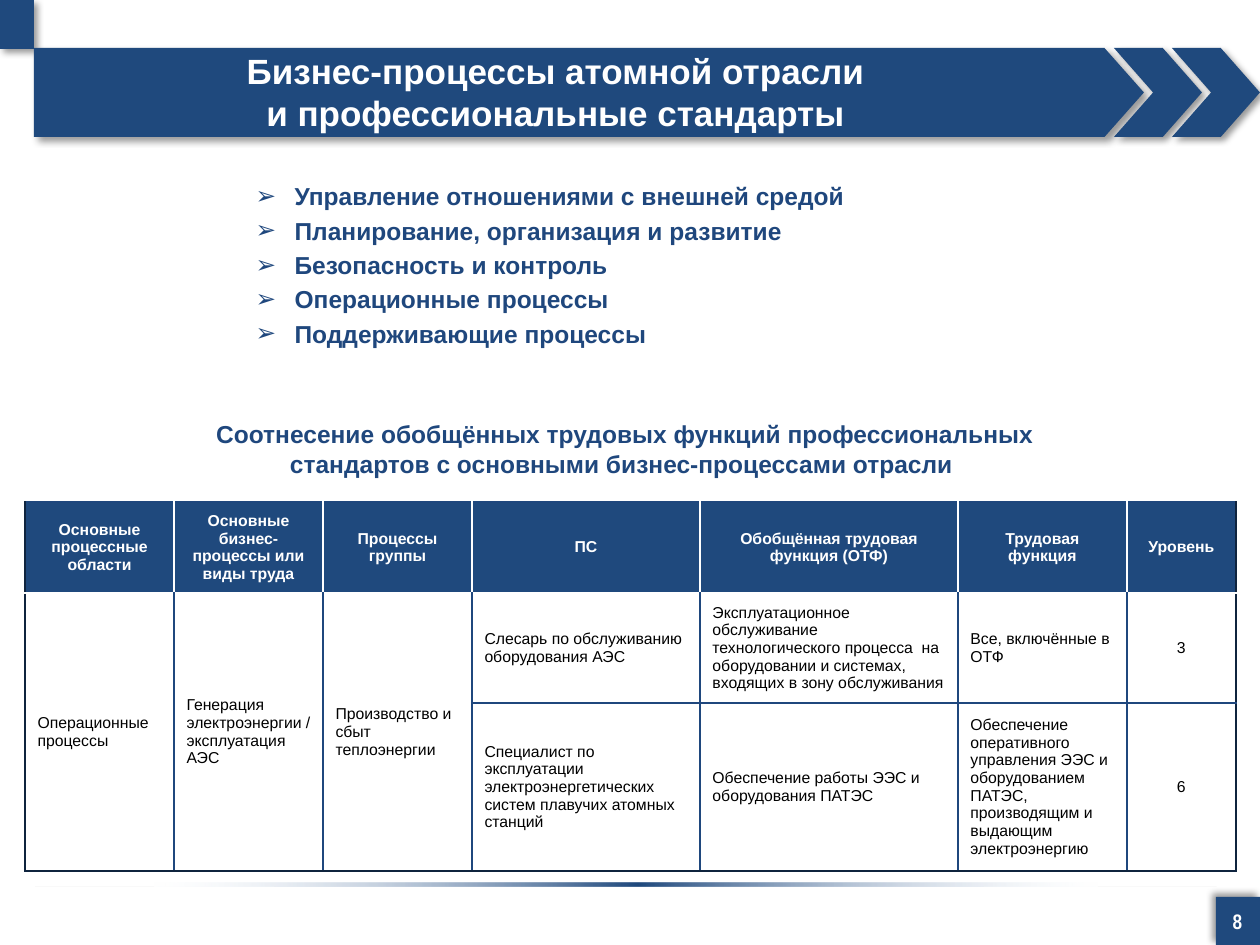
from lxml.etree import SubElement, fromstring
from pptx import Presentation
from pptx.dml.color import RGBColor
from pptx.enum.shapes import MSO_SHAPE as Shape
from pptx.enum.text import MSO_ANCHOR as Anchor, MSO_AUTO_SIZE as AutoSize, PP_ALIGN as Align
from pptx.oxml.ns import nsdecls, qn
from pptx.util import Pt

PX = 914400 / 126
BLUE, INK, EDGE, PALE = "1F497D", "1F477D", "0F243E", "DCE6F2"
WHITE, BLACK = "FFFFFF", "000000"

# Content
TITLE = "Бизнес-процессы атомной отрасли \vи профессиональные стандарты "
PROCESSES = [
    "Управление отношениями с внешней средой",
    "Планирование, организация и развитие",
    "Безопасность и контроль",
    "Операционные процессы",
    "Поддерживающие процессы",
]
TABLE_HEADING = ("Соотнесение обобщённых трудовых функций профессиональных "
                 "стандартов с основными бизнес-процессами отрасли ")
PAGE_NUMBER = "8"
ROWS = [
    ["Основные процессные области", "Основные бизнес-процессы или виды труда",
     "Процессы группы", "ПС", "Обобщённая трудовая функция (ОТФ)",
     "Трудовая функция", "Уровень"],
    ["Операционные процессы", "Генерация электроэнергии / эксплуатация АЭС",
     "Производство и сбыт теплоэнергии", "Слесарь по обслуживанию оборудования АЭС",
     "Эксплуатационное обслуживание технологического процесса  на оборудовании "
     "и системах, входящих в зону обслуживания", "Все, включённые в ОТФ", "3"],
    [None, None, None,
     "Специалист по эксплуатации электроэнергетических систем плавучих атомных станций",
     "Обеспечение работы ЭЭС и оборудования ПАТЭС",
     "Обеспечение оперативного управления ЭЭС и оборудованием ПАТЭС, "
     "производящим и выдающим электроэнергию", "6"],
]
COLUMN_WIDTHS = [149, 149, 149, 228, 258, 169, 109]
ROW_HEIGHTS = [91, 110, 168]

# Banner parts: preset, box in px, adjustment, shadow direction in degrees
BANNER = [
    (Shape.PENTAGON, (1216, 897, 44, 48), 0, 225),
    (Shape.PENTAGON, (0, 0, 34, 49), 0, 45),
    (Shape.PENTAGON, (34, 48, 1110, 89), 0.443, 45),
    (Shape.CHEVRON, (1114, 48, 88, 89), 0.445, 45),
    (Shape.CHEVRON, (1172, 48, 88, 89), 0.445, 45),
]
# Footer rule: position in percent, colour, opacity in percent
RULE_STOPS = [(10, PALE, 0), (51, BLUE, 100), (90, PALE, 0)]


def px(value):
    return round(value * PX)


def rgb(value):
    return RGBColor.from_string(value)


def place(shape, left, top, width, height):
    shape.left, shape.top = px(left), px(top)
    shape.width, shape.height = px(width), px(height)


def write(frame, text, size=14, color=INK, bold=True, font="Arial",
          align=Align.CENTER, first=True, before=None):
    paragraph = frame.paragraphs[0] if first else frame.add_paragraph()
    paragraph.text = text
    paragraph.alignment = align
    if before is not None:
        paragraph.space_before = Pt(before)
    for run in paragraph.runs:
        run.font.name, run.font.size, run.font.bold = font, Pt(size), bold
        run.font.color.rgb = rgb(color)
    return paragraph


def add_text(slide, box, text, anchor=Anchor.TOP, **style):
    shape = slide.shapes.add_textbox(*map(px, box))
    shape.text_frame.word_wrap = True
    shape.text_frame.vertical_anchor = anchor
    write(shape.text_frame, text, **style)


def add_plate(slide, preset, box, adjustment):
    shape = slide.shapes.add_shape(preset, *map(px, box))
    shape.adjustments[0] = adjustment
    shape.shadow.inherit = False
    shape.line.fill.background()
    return shape


def add_shadow(shape, direction):
    effects = shape.element.spPr.find(qn("a:effectLst"))
    effects.append(fromstring(
        f'<a:outerShdw {nsdecls("a")} blurRad="{Pt(4)}" dist="{Pt(3)}" '
        f'dir="{direction * 60000}" algn="tl" rotWithShape="0">'
        f'<a:srgbClr val="{BLACK}"><a:alpha val="40000"/></a:srgbClr></a:outerShdw>'))


def fill_gradient(shape, stops):
    shape.fill.background()
    properties = shape.element.spPr
    stop_xml = "".join(
        f'<a:gs pos="{position * 1000}"><a:srgbClr val="{color}">'
        f'<a:alpha val="{opacity * 1000}"/></a:srgbClr></a:gs>'
        for position, color, opacity in stops)
    properties.replace(properties.find(qn("a:noFill")), fromstring(
        f'<a:gradFill {nsdecls("a")}><a:gsLst>{stop_xml}</a:gsLst><a:lin ang="0"/></a:gradFill>'))


def set_borders(cell, **colors):
    properties = cell._tc.get_or_add_tcPr()
    for index, (side, color) in enumerate(colors.items()):
        properties.insert(index, fromstring(
            f'<a:ln{side} {nsdecls("a")} w="{Pt(1)}"><a:solidFill>'
            f'<a:srgbClr val="{color}"/></a:solidFill></a:ln{side}>'))


def add_table(slide):
    last_row, last_column = len(ROWS) - 1, len(COLUMN_WIDTHS) - 1
    table = slide.shapes.add_table(
        len(ROWS), len(COLUMN_WIDTHS), px(25), px(502),
        px(sum(COLUMN_WIDTHS)), px(sum(ROW_HEIGHTS))).table
    table.horz_banding = False
    for column, width in zip(table.columns, COLUMN_WIDTHS):
        column.width = px(width)
    for row, height in zip(table.rows, ROW_HEIGHTS):
        row.height = px(height)
    for c, text in enumerate(ROWS[last_row]):
        if text is None:
            table.cell(last_row - 1, c).merge(table.cell(last_row, c))

    for r, texts in enumerate(ROWS):
        header = r == 0
        inner = WHITE if header else INK
        for c, text in enumerate(texts):
            cell = table.cell(r, c)
            at_bottom = r == last_row or cell.is_merge_origin
            set_borders(cell,
                        L=EDGE if c == 0 else inner,
                        R=EDGE if c == last_column else inner,
                        T=WHITE if r == 1 else INK,
                        B=EDGE if at_bottom else inner)
            if header:
                cell.fill.solid()
                cell.fill.fore_color.rgb = rgb(BLUE)
            else:
                cell.fill.background()
            if text is None:
                continue
            cell.vertical_anchor = Anchor.MIDDLE
            centred = header or c == last_column
            write(cell.text_frame, text, size=9, bold=header, before=1.8,
                  color=WHITE if header else BLACK,
                  align=Align.CENTER if centred else Align.LEFT)


def main():
    presentation = Presentation()
    presentation.slide_width, presentation.slide_height = px(1260), px(945)
    slide = presentation.slides.add_slide(presentation.slide_layouts[1])
    title, body = slide.placeholders

    # Banner and footer rule
    for preset, box, adjustment, direction in BANNER:
        plate = add_plate(slide, preset, box, adjustment)
        plate.fill.solid()
        plate.fill.fore_color.rgb = rgb(BLUE)
        add_shadow(plate, direction)
    fill_gradient(add_plate(slide, Shape.PENTAGON, (35, 883, 1181, 3), 0), RULE_STOPS)

    # Title, brought in front of the banner
    title.element.getparent().append(title.element)
    place(title, 64, 52, 993, 79)
    title.text_frame.auto_size = AutoSize.NONE
    title.text_frame.vertical_anchor = Anchor.MIDDLE
    write(title.text_frame, TITLE, size=20, color=WHITE)

    add_table(slide)
    add_text(slide, (1213, 900, 49, 42), PAGE_NUMBER, anchor=Anchor.MIDDLE,
             size=12, color=WHITE, font="Arial Narrow")
    add_text(slide, (154, 413, 942, 59), TABLE_HEADING, before=2.8)

    # List of business processes
    place(body, 243, 175, 804, 198)
    body.text_frame.auto_size = AutoSize.NONE
    for index, process in enumerate(PROCESSES):
        paragraph = write(body.text_frame, process, align=Align.LEFT, first=index == 0)
        properties = paragraph._p.get_or_add_pPr()
        properties.set("marL", str(px(39)))
        properties.set("indent", str(-px(39)))
        SubElement(properties, qn("a:buFont"), typeface="Arial")
        SubElement(properties, qn("a:buChar"), char="➢")

    presentation.save("out.pptx")


if __name__ == "__main__":
    main()
